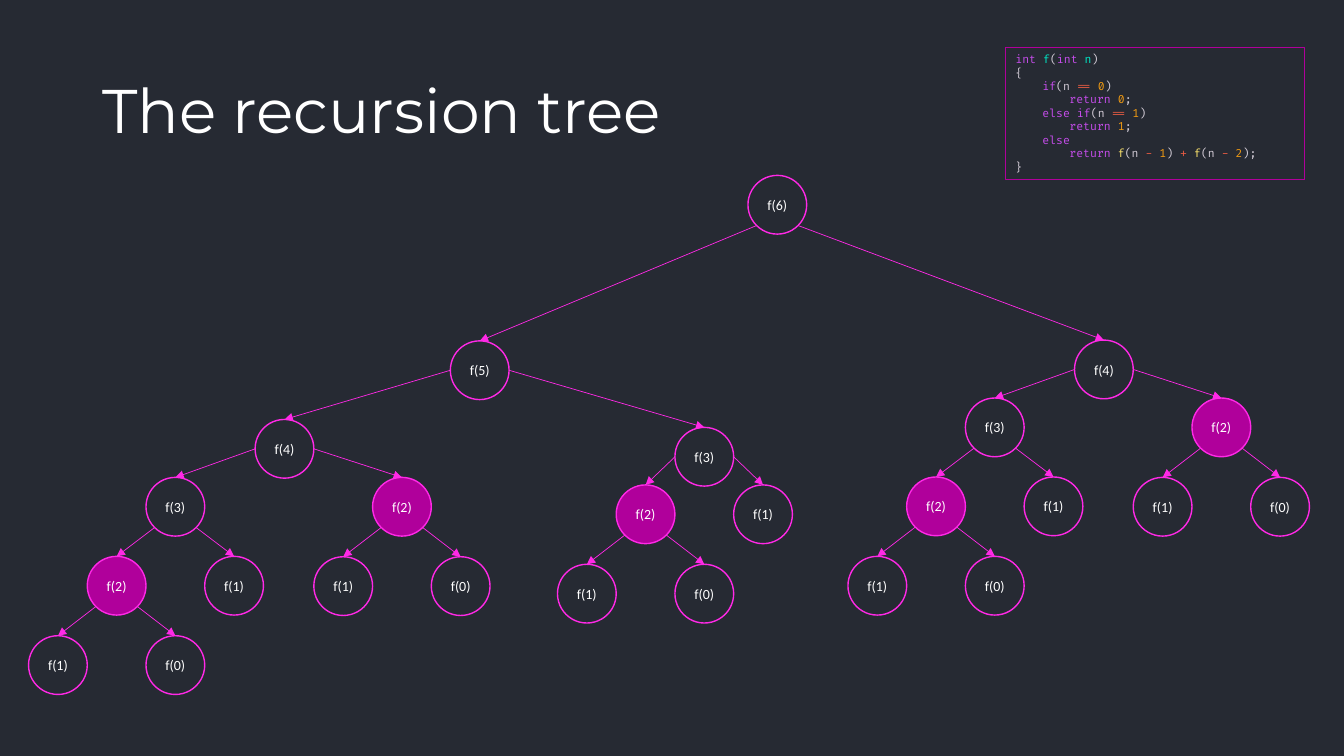
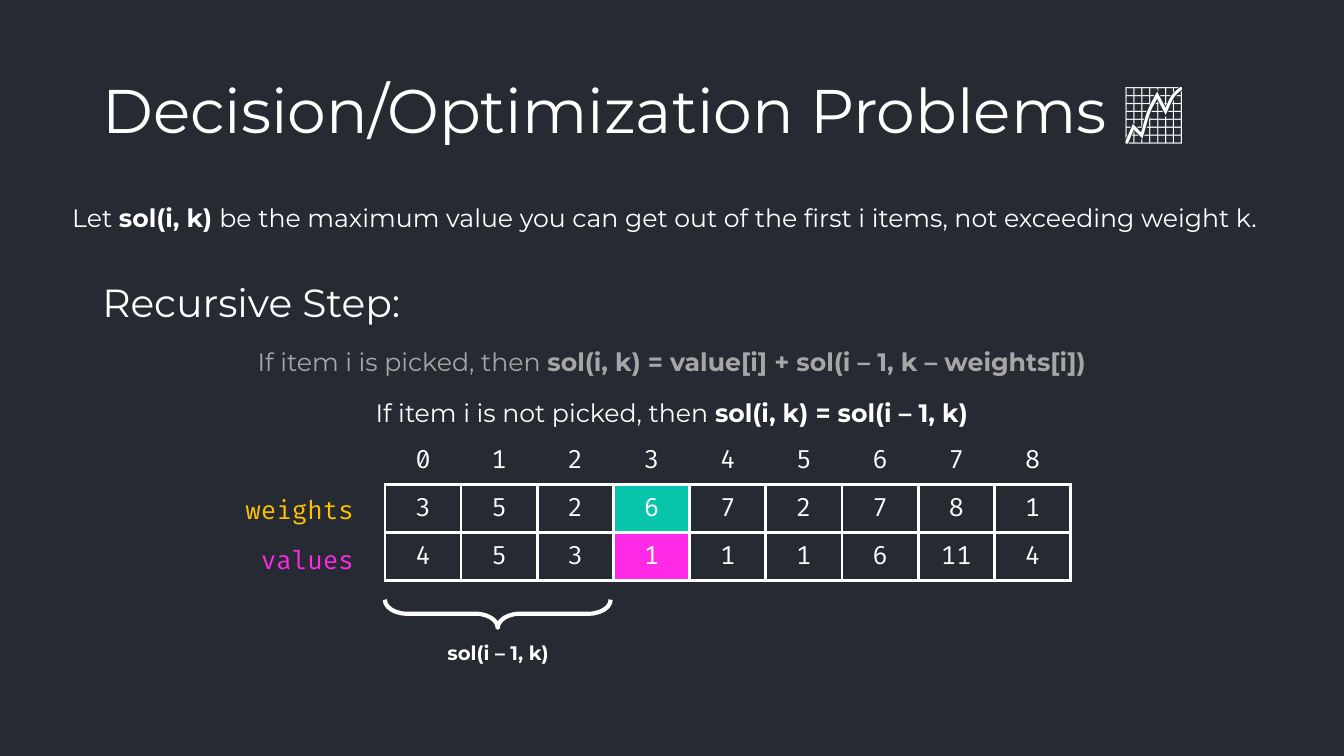
import math

from lxml import etree
from pptx import Presentation
from pptx import util as u
from pptx.dml.color import RGBColor
from pptx.enum import shapes, text
from pptx.oxml.ns import qn

COLOURS = {
    "background": "262A33", "white": "FFFFFF", "muted": "A6A6A6",
    "pink": "FF29E6", "purple": "B0009B", "teal": "07C4AB", "gold": "FFC000",
    "keyword": "C74DED", "name": "00E8C6", "plain": "D5CED9",
    "operator": "EE5D43", "number": "F39C12", "call": "FFE66D",
}
HEADING_FONT, CODE_FONT, NODE_FONT = "Montserrat", "Fira Code", "Calibri"
LEFT, CONTENT_WIDTH = 2.33, 29.21

DIAMETER = 1.48
CODE_INDENT = 0.68
# Centre of each child, measured from the centre of f(n): left (n - 1), right (n - 2)
CHILD_OFFSETS = {
    6: ((-7.5, 4.17), (8.23, 4.15)),
    5: ((-4.92, 1.98), (5.66, 2.18)),
    4: ((-2.75, 1.46), (2.96, 1.46)),
    3: ((-1.48, 1.99), (1.48, 1.99)),
    2: ((-1.48, 2), (1.48, 2)),
}
LOW_OFFSETS = ((-1.48, 1.45), (1.48, 1.45))

WEIGHTS = [3, 5, 2, 6, 7, 2, 7, 8, 1]
VALUES = [4, 5, 3, 1, 1, 1, 6, 11, 4]
CURRENT_ITEM = 3
COLUMN_WIDTH, ROW_HEIGHT = 1.92, 1.21
TABLE_LEFT, TABLE_TOP = 9.7, 11


def colour(name):
    return RGBColor.from_string(COLOURS[name])


def cm(*lengths):
    return [u.Cm(length) for length in lengths]


def add_run(paragraph, words, colour_name, size, font, bold=False):
    run = paragraph.add_run()
    run.text = words
    run.font.name = font
    run.font.size = u.Pt(size)
    run.font.bold = bold
    run.font.color.rgb = colour(colour_name)


def add_text(slide, box, runs, size, font=HEADING_FONT, colour_name="white",
             align=text.PP_ALIGN.LEFT, anchor=text.MSO_ANCHOR.TOP, wrap=True):
    """Add a one-paragraph text box; runs are (words, bold) pairs."""
    frame = slide.shapes.add_textbox(*cm(*box)).text_frame
    frame.word_wrap = wrap
    frame.vertical_anchor = anchor
    paragraph = frame.paragraphs[0]
    paragraph.alignment = align
    for words, bold in runs:
        add_run(paragraph, words, colour_name, size, font, bold)
    return paragraph


def add_titled_slide(presentation, title):
    slide = presentation.slides.add_slide(presentation.slide_layouts[6])
    paragraph = add_text(slide, (LEFT, 1.01, CONTENT_WIDTH, 3.68), [(title, False)], 44,
                         anchor=text.MSO_ANCHOR.MIDDLE)
    paragraph.line_spacing = 0.9
    return slide


def add_outline(slide, kind, box, line_colour, line_width, fill=None):
    shape = slide.shapes.add_shape(kind, *cm(*box))
    shape.shadow.inherit = False
    shape.line.color.rgb = colour(line_colour)
    shape.line.width = u.Pt(line_width)
    if fill:
        shape.fill.solid()
        shape.fill.fore_color.rgb = colour(fill)
    else:
        shape.fill.background()
    return shape


def add_node(slide, n, x, y):
    """Add the circle for f(n), centred on x, y."""
    box = (x - DIAMETER / 2, y - DIAMETER / 2, DIAMETER, DIAMETER)
    node = add_outline(slide, shapes.MSO_SHAPE.OVAL, box, "pink", 1,
                       "purple" if n == 2 else None)
    frame = node.text_frame
    frame.word_wrap = False
    frame.vertical_anchor = text.MSO_ANCHOR.MIDDLE
    frame.paragraphs[0].alignment = text.PP_ALIGN.CENTER
    add_run(frame.paragraphs[0], f"f({n})", "white", 10, NODE_FONT)
    return node


def add_arrow(slide, start_x, start_y, child):
    arrow = slide.shapes.add_connector(shapes.MSO_CONNECTOR.STRAIGHT,
                                       *cm(start_x, start_y, start_x, start_y))
    arrow.end_connect(child, 0)
    arrow.line.color.rgb = colour("pink")
    arrow.line.width = u.Pt(0.5)
    properties = arrow._element.spPr
    etree.SubElement(properties.find(qn("a:ln")), qn("a:tailEnd"), type="triangle")
    etree.SubElement(properties, qn("a:effectLst"))


def add_tree(slide, n, x, y, low=False, from_sides=False):
    """Add f(n) with all its calls; arrows leave from the sides or lower diagonals."""
    node = add_node(slide, n, x, y)
    if n < 2:
        return node
    angle = 0 if from_sides else math.pi / 4
    reach = DIAMETER / 2 * math.cos(angle)
    drop = DIAMETER / 2 * math.sin(angle)
    offsets = LOW_OFFSETS if low else CHILD_OFFSETS[n]
    for step, (dx, dy) in enumerate(offsets, start=1):
        child_n = n - step
        child_low = (n, child_n) == (5, 3)
        child = add_tree(slide, child_n, x + dx, y + dy, child_low,
                         child_low or child_n in (4, 5))
        add_arrow(slide, x + math.copysign(reach, dx), y + drop, child)
    return node


def condition(keyword, number):
    return [(keyword, "keyword"), ("(n ", "plain"), ("== ", "operator"),
            (number, "number"), (")", "plain")]


def return_number(number):
    return [("return ", "keyword"), (number, "number"), (";", "plain")]


def recursive_call(number, ending):
    return [("f", "call"), ("(n ", "plain"), ("- ", "operator"),
            (number, "number"), (ending, "plain")]


def add_code(slide, box, lines):
    """Add a framed listing; lines are (indent level, coloured tokens)."""
    frame = add_outline(slide, shapes.MSO_SHAPE.RECTANGLE, box, "purple", 0.75).text_frame
    frame.word_wrap = True
    frame.vertical_anchor = text.MSO_ANCHOR.TOP
    for index, (level, tokens) in enumerate(lines):
        paragraph = frame.add_paragraph() if index else frame.paragraphs[0]
        paragraph.alignment = text.PP_ALIGN.LEFT
        paragraph._p.get_or_add_pPr().set("marL", str(u.Cm(level * CODE_INDENT)))
        for words, colour_name in tokens:
            add_run(paragraph, words, colour_name, 8, CODE_FONT)


def set_borders(cell, visible_sides):
    properties = cell._tc.get_or_add_tcPr()
    for index, side in enumerate("LRTB"):
        line = etree.Element(qn(f"a:ln{side}"), w=str(u.Pt(2.25)))
        if side in visible_sides:
            fill = etree.SubElement(line, qn("a:solidFill"))
            etree.SubElement(fill, qn("a:srgbClr"), val=COLOURS["white"])
        else:
            etree.SubElement(line, qn("a:noFill"))
        properties.insert(index, line)


def add_items_table(slide, rows, highlights):
    """Add the table; highlights maps (row, column) to a fill colour."""
    columns = len(rows[0])
    table = slide.shapes.add_table(
        len(rows), columns,
        *cm(TABLE_LEFT, TABLE_TOP, columns * COLUMN_WIDTH, len(rows) * ROW_HEIGHT)).table
    table.first_row = table.horz_banding = False
    for column in table.columns:
        column.width = u.Cm(COLUMN_WIDTH)
    for r, values in enumerate(rows):
        table.rows[r].height = u.Cm(ROW_HEIGHT)
        for c, value in enumerate(values):
            cell = table.cell(r, c)
            cell.vertical_anchor = text.MSO_ANCHOR.MIDDLE
            paragraph = cell.text_frame.paragraphs[0]
            paragraph.alignment = text.PP_ALIGN.CENTER
            add_run(paragraph, str(value), "white", 18, CODE_FONT)
            if (r, c) in highlights:
                cell.fill.solid()
                cell.fill.fore_color.rgb = colour(highlights[r, c])
            else:
                cell.fill.background()
            set_borders(cell, "LRTB" if r else "B")


def add_brace_below(slide, left, top, width, height):
    """Add a brace that opens upwards: a left brace turned about its centre."""
    box = (left + (width - height) / 2, top + (height - width) / 2, height, width)
    brace = add_outline(slide, shapes.MSO_SHAPE.LEFT_BRACE, box, "white", 3)
    brace.adjustments[0] = 0.783
    brace.rotation = 270


def build_recursion_tree(presentation):
    slide = add_titled_slide(presentation, "The recursion tree")
    add_tree(slide, 6, 19.59, 5.16)
    add_code(slide, (25.34, 1.2, 7.53, 3.33), [
        (0, [("int ", "keyword"), ("f", "name"), ("(", "plain"),
             ("int ", "keyword"), ("n", "name"), (")", "plain")]),
        (0, [("{", "plain")]),
        (1, condition("if", "0")),
        (2, return_number("0")),
        (1, condition("else if", "1")),
        (2, return_number("1")),
        (1, [("else", "keyword")]),
        (2, [("return ", "keyword"), *recursive_call("1", ") "),
             ("+ ", "operator"), *recursive_call("2", ");")]),
        (0, [("}", "plain")]),
    ])


def build_recursive_step(presentation):
    slide = add_titled_slide(presentation, "Decision/Optimization Problems 📈")
    add_text(slide, (1.57, 4.98, 30.71, 1.02), [
        ("Let ", False), ("sol(i, k) ", True),
        ("be the maximum value you can get out of the first i items, "
         "not exceeding weight k.", False)], 18, wrap=False)
    heading = add_text(slide, (LEFT, 7.01, CONTENT_WIDTH, 1.42),
                       [("Recursive Step:", False)], 28)
    heading.line_spacing = 0.9

    cases = [
        (8.59, "muted", "If item i is picked, then ",
         "sol(i, k) = value[i] + sol(i – 1, k – weights[i])"),
        (9.88, "white", "If item i is not picked, then ", "sol(i, k) = sol(i – 1, k)"),
    ]
    for top, colour_name, case, formula in cases:
        add_text(slide, (5.61, top, 22.64, 1.02), [(case, False), (formula, True)], 18,
                 colour_name=colour_name, align=text.PP_ALIGN.CENTER)

    for top, label, colour_name in [(12.32, "weights", "gold"), (13.6, "values", "pink")]:
        add_text(slide, (5.61, top, 3.56, 1.02), [(label, False)], 18, CODE_FONT,
                 colour_name, text.PP_ALIGN.RIGHT)
    add_items_table(slide, [range(len(WEIGHTS)), WEIGHTS, VALUES],
                    {(1, CURRENT_ITEM): "teal", (2, CURRENT_ITEM): "pink"})

    add_brace_below(slide, TABLE_LEFT, 15.11, 5.69, 0.71)
    add_text(slide, (9.42, 16.03, 6.27, 0.86), [("sol(i – 1, k)", True)], 14,
             align=text.PP_ALIGN.CENTER)


def main():
    presentation = Presentation()
    presentation.slide_width, presentation.slide_height = cm(33.87, 19.05)
    background = presentation.slide_master.background.fill
    background.solid()
    background.fore_color.rgb = colour("background")
    build_recursion_tree(presentation)
    build_recursive_step(presentation)
    presentation.save("out.pptx")


if __name__ == "__main__":
    main()
